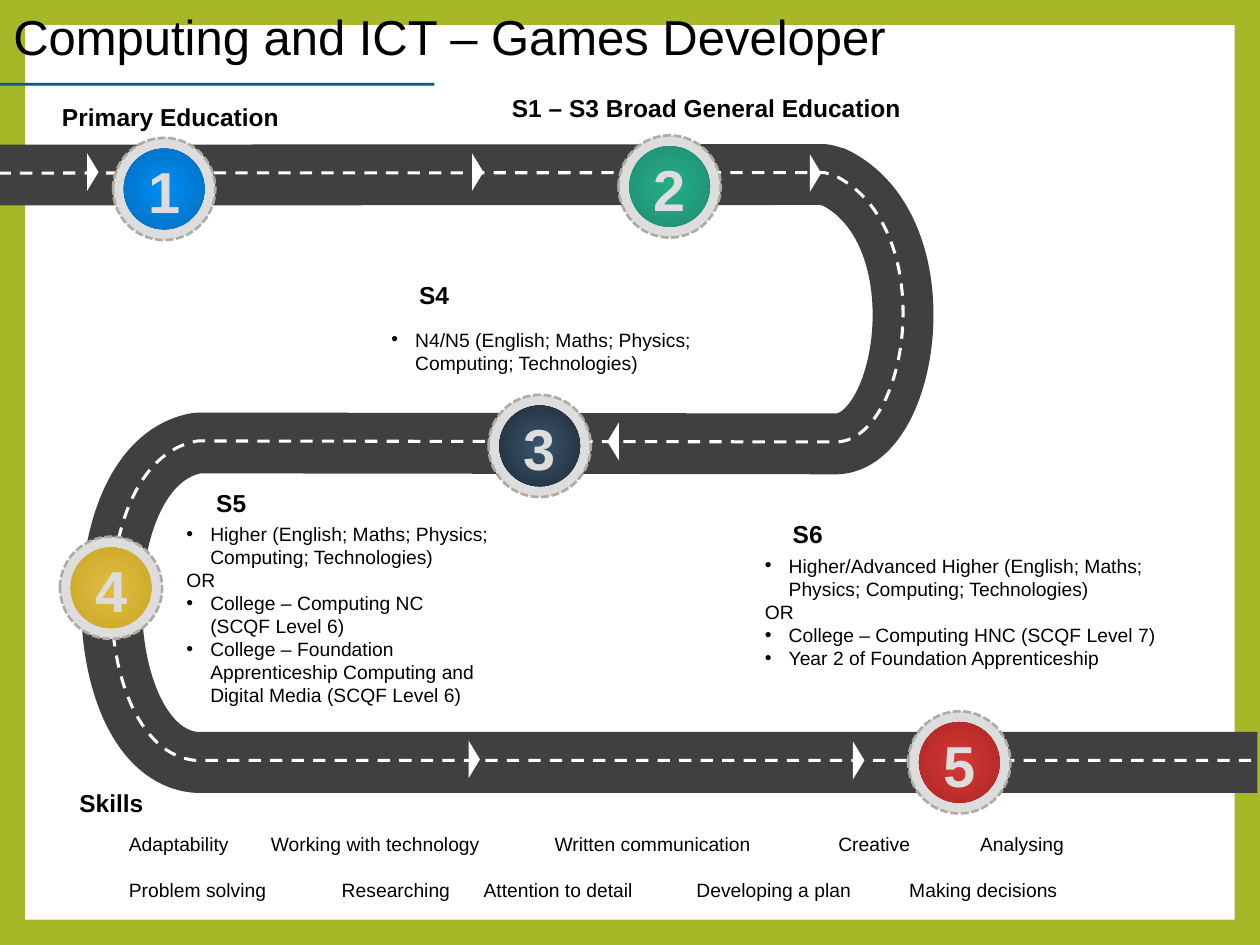
from lxml.etree import SubElement
from pptx import Presentation
from pptx.dml.color import RGBColor
from pptx.enum.dml import MSO_LINE_DASH_STYLE as Dash
from pptx.enum.shapes import MSO_SHAPE as Preset
from pptx.enum.text import MSO_ANCHOR as Anchor, MSO_AUTO_SIZE as AutoSize, PP_ALIGN as Align
from pptx.oxml.ns import qn
from pptx.util import Cm, Pt

COLORS = {
    "frame": "A6B727", "page": "FFFFFF", "text": "000000", "rule": "015D82",
    "asphalt": "404040", "marking": "FFFFFF", "ring": "DDDDDD", "ring edge": "AEABA0",
}
WIDTH, HEIGHT, FRAME = 25.4, 19.05, 0.51

# All places and sizes are in centimetres: left, top, width, height.
TITLE = ("Computing and ICT – Games Developer", (0.02, 0, 24.16, 1.45))
HEADINGS = [
    ("Primary Education", (1.0, 1.93, 5.21, 0.86)),
    ("S1 – S3 Broad General Education", (10.07, 1.75, 8.74, 0.86)),
    ("S4", (8.2, 5.51, 7.82, 0.86)),
    ("S5", (4.11, 9.7, 6.17, 0.86)),
    ("S6", (15.73, 10.32, 6.05, 0.86)),
    ("Skills", (1.35, 15.75, 3.73, 0.86)),
]
OR = "OR"
COURSES = [
    (["N4/N5 (English; Maths; Physics; Computing; Technologies)"],
     (7.64, 6.48, 8.51, 1.19)),
    (["Higher (English; Maths; Physics; Computing; Technologies)",
      OR,
      "College – Computing NC (SCQF Level 6)",
      "College – Foundation Apprenticeship Computing and Digital Media (SCQF Level 6)"],
     (3.51, 10.38, 6.6, 4.01)),
    (["Higher/Advanced Higher (English; Maths; Physics; Computing; Technologies)",
      OR,
      "College – Computing HNC (SCQF Level 7)",
      "Year 2 of Foundation Apprenticeship"],
     (15.17, 11.02, 9.02, 2.62)),
]
# Each skill with the tab column where it starts.
TAB = 1.43
SKILLS = [
    [(0, "Adaptability"), (2, "Working with technology"), (6, "Written communication"),
     (10, "Creative"), (12, "Analysing")],
    [(0, "Problem solving"), (3, "Researching"), (5, "Attention to detail"),
     (8, "Developing a plan"), (11, "Making decisions")],
]
SKILLS_PLACE = (2.35, 16.63, 21.29, 1.68)

# One point is a straight stretch, three points are a Bezier curve.
ROAD_START = (-0.03, 3.49)
ROAD = [
    [(16.54, 3.48)],
    [(16.64, 3.46), (16.74, 3.53), (16.81, 3.53)],
    [(19, 4.6), (18.31, 8.97), (16.81, 8.91)],
    [(3.99, 8.89)],
    [(1.63, 9.27), (1.73, 15.11), (3.94, 15.33)],
    [(25.35, 15.33)],
]
# Centre and rotation of each direction arrow.
ARROWS = [
    (1.87, 3.47, 90), (9.63, 3.47, 90), (16.44, 3.49, 90),
    (12.36, 8.9, 270), (9.56, 15.31, 90), (17.31, 15.33, 90),
]
# Number, centre, inner and outer gradient colour.
BADGES = [
    ("1", 3.31, 3.81, "008DF6", "0070C0"),
    ("2", 13.5, 3.76, "25AD89", "1F9072"),
    ("3", 10.88, 8.99, "3B556D", "202E3B"),
    ("4", 2.24, 11.85, "DFBE45", "CBA723"),
    ("5", 19.34, 15.37, "D63A36", "AE2724"),
]


def rgb(color):
    return RGBColor.from_string(COLORS.get(color, color))


def centred(x, y, width, height):
    return x - width / 2, y - height / 2, width, height


def add_text(slide, lines, place, size=11, color="text", bold=False, align=Align.LEFT,
             wrap=True, bulleted=False, tab_stops=(), gap=0):
    """Add a text box; tab_stops holds one list of stops per line, gap parts the lines."""
    frame = slide.shapes.add_textbox(*map(Cm, place)).text_frame
    frame.word_wrap = wrap
    frame.auto_size = AutoSize.SHAPE_TO_FIT_TEXT
    frame.vertical_anchor = Anchor.MIDDLE
    for i, line in enumerate(lines):
        paragraph = frame.paragraphs[0] if i == 0 else frame.add_paragraph()
        paragraph.alignment = align
        if i and gap:
            paragraph.space_before = Pt(gap)
        run = paragraph.add_run()
        run.text = line
        run.font.name, run.font.size, run.font.bold = "Arial", Pt(size), bold
        run.font.color.rgb = rgb(color)
        props = paragraph._p.get_or_add_pPr()
        if bulleted and line != OR:
            props.set("marL", str(Cm(0.48)))
            props.set("indent", str(-Cm(0.48)))
            SubElement(props, qn("a:buFont"), typeface="Arial")
            SubElement(props, qn("a:buChar"), char="•")
        if tab_stops:
            tabs = SubElement(props, qn("a:tabLst"))
            for stop in tab_stops[i]:
                SubElement(tabs, qn("a:tab"), pos=str(Cm(stop)), algn="l")


def add_solid(slide, preset, place, color):
    shape = slide.shapes.add_shape(preset, *map(Cm, place))
    shape.shadow.inherit = False
    shape.fill.solid()
    shape.fill.fore_color.rgb = rgb(color)
    shape.line.fill.background()
    return shape


def bend(road):
    """Turn each three line segments that belong to one curve into a Bezier segment."""
    segments = iter(list(road._element.iter(qn("a:lnTo"))))
    for stretch in ROAD:
        first, *others = [next(segments) for _ in stretch]
        if others:
            curve = SubElement(first.getparent(), qn("a:cubicBezTo"))
            first.addprevious(curve)
            for segment in (first, *others):
                curve.append(segment[0])
                segment.getparent().remove(segment)


def add_road(slide, color, width, drop=0, dash=None):
    points = [ROAD_START, *(point for stretch in ROAD for point in stretch)]
    start, *rest = [(Cm(x), Cm(y + drop)) for x, y in points]
    builder = slide.shapes.build_freeform(*start)
    builder.add_line_segments(rest, close=False)
    road = builder.convert_to_shape()
    bend(road)
    road.shadow.inherit = False
    road.fill.background()
    road.line.color.rgb = rgb(color)
    road.line.width = Pt(width)
    if dash:
        road.line.dash_style = dash


def add_badge(slide, number, x, y, inner, outer):
    ring = add_solid(slide, Preset.OVAL, centred(x, y, 2.06, 2.06), "ring")
    ring.line.color.rgb = rgb("ring edge")
    ring.line.width = Pt(1.5)
    ring.line.dash_style = Dash.SQUARE_DOT

    disc = add_solid(slide, Preset.OVAL, centred(x, y, 1.63, 1.63), inner)
    disc.fill.gradient()
    for stop, position, color in zip(disc.fill.gradient_stops, (0, 0.93), (inner, outer)):
        stop.position = position
        stop.color.rgb = rgb(color)
    gradient = disc._element.spPr.find(qn("a:gradFill"))
    gradient.remove(gradient.find(qn("a:lin")))
    radial = SubElement(gradient, qn("a:path"), path="circle")
    SubElement(radial, qn("a:fillToRect"), l="50000", t="50000", r="50000", b="50000")

    add_text(slide, [number], centred(x, y + 0.03, 1.17, 1.68), size=33, color="ring",
             bold=True, align=Align.CENTER, wrap=False)


def main():
    deck = Presentation()
    deck.slide_width, deck.slide_height = Cm(WIDTH), Cm(HEIGHT)
    slide = deck.slides.add_slide(deck.slide_layouts[6])
    slide.background.fill.solid()
    slide.background.fill.fore_color.rgb = rgb("frame")
    add_solid(slide, Preset.RECTANGLE,
              (FRAME, FRAME, WIDTH - 2 * FRAME, HEIGHT - 2 * FRAME), "page")

    title, place = TITLE
    add_text(slide, [title], place, size=28)
    add_solid(slide, Preset.RECTANGLE, (0, 1.67, 8.76, 0.06), "rule")
    for heading, place in HEADINGS:
        add_text(slide, [heading], place, size=14, bold=True)
    for courses, place in COURSES:
        add_text(slide, courses, place, bulleted=True)
    add_text(slide, ["\t".join(skill for _, skill in row) for row in SKILLS], SKILLS_PLACE,
             tab_stops=[[column * TAB for column, _ in row[1:]] for row in SKILLS], gap=13.1)

    add_road(slide, "asphalt", 34.75, drop=0.04)
    add_road(slide, "marking", 1.75, dash=Dash.DASH)
    for x, y, rotation in ARROWS:
        arrow = add_solid(slide, Preset.ISOSCELES_TRIANGLE, centred(x, y, 0.76, 0.23), "marking")
        arrow.rotation = rotation
    for badge in BADGES:
        add_badge(slide, *badge)
    deck.save("out.pptx")


if __name__ == "__main__":
    main()
